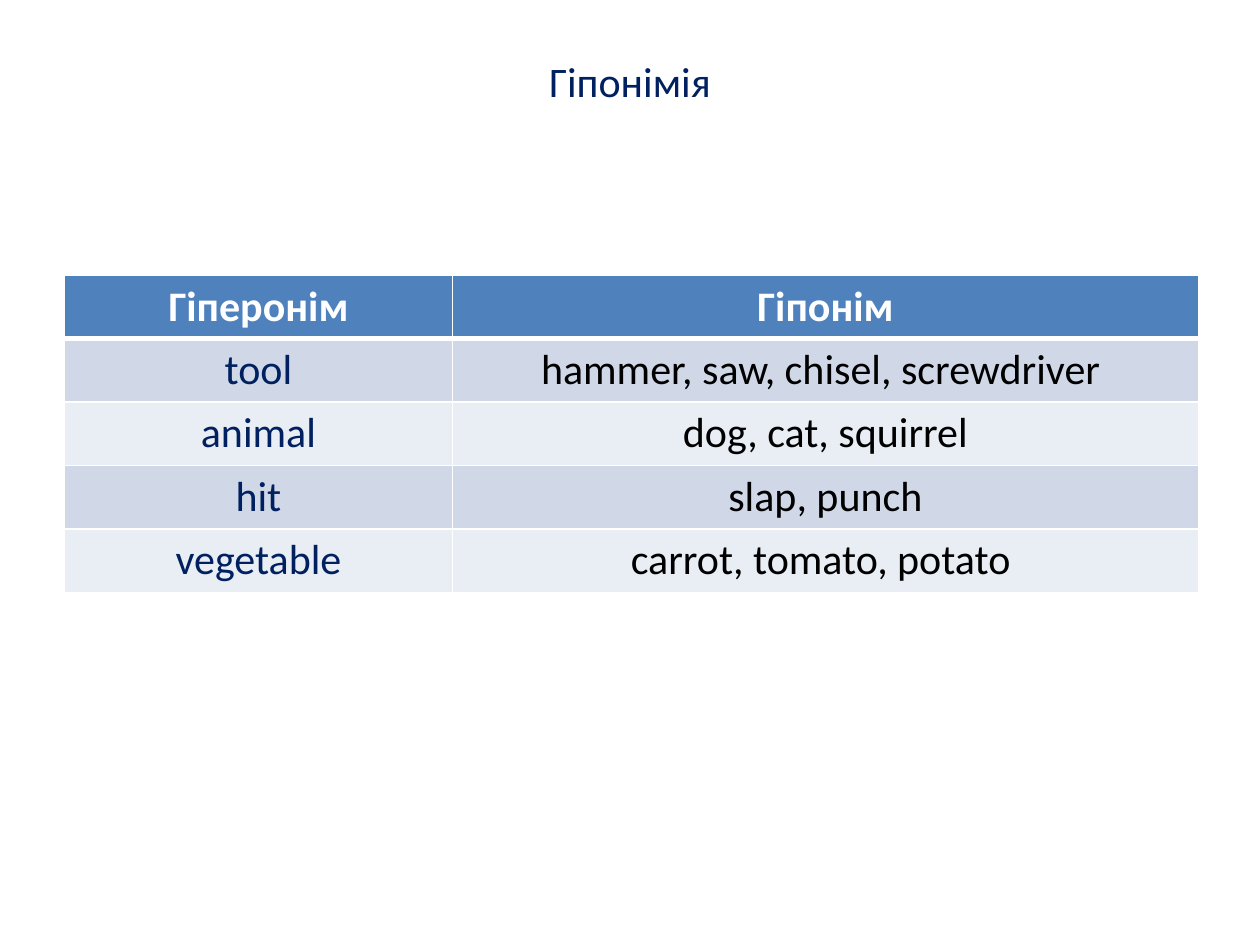
from lxml import etree
from pptx import Presentation
from pptx import util as u
from pptx.dml.color import RGBColor
from pptx.enum import text
from pptx.oxml import ns

TITLE = "Гіпонімія"
ROWS = [
    ("Гіперонім", "Гіпонім"),
    ("tool", "hammer, saw, chisel, screwdriver "),
    ("animal", "dog, cat, squirrel"),
    ("hit", "slap, punch"),
    ("vegetable", "carrot, tomato, potato "),
]
COLUMN_WIDTHS = (7.82, 15.04)
ROW_HEIGHT = 1.28
NAVY, WHITE, BLACK = "002060", "FFFFFF", "000000"
HEADER_FILL, BAND_FILLS = "4F81BD", ("D0D8E8", "E9EDF4")


def color(value):
    return RGBColor.from_string(value)


def write(text_frame, content, font_color, bold=False):
    text_frame.text = content
    paragraph = text_frame.paragraphs[0]
    paragraph.alignment = text.PP_ALIGN.CENTER
    font = paragraph.runs[0].font
    font.name, font.size, font.bold = "Calibri", u.Pt(24), bold
    font.color.rgb = color(font_color)


def add_borders(cell, bottom, top):
    """Draw white cell borders; bottom and top are widths in points."""
    properties = cell._tc.get_or_add_tcPr()
    for side, width in (("L", 1), ("R", 1), ("T", top), ("B", bottom)):
        line = etree.SubElement(properties, ns.qn(f"a:ln{side}"), w=str(u.Pt(width)))
        fill = etree.SubElement(line, ns.qn("a:solidFill"))
        etree.SubElement(fill, ns.qn("a:srgbClr"), val=WHITE)


def add_title(slide):
    box = slide.shapes.add_textbox(u.Cm(1.27), u.Cm(0.76), u.Cm(22.86), u.Cm(1.75))
    box.text_frame.word_wrap = True
    box.text_frame.vertical_anchor = text.MSO_ANCHOR.MIDDLE
    write(box.text_frame, TITLE, NAVY)


def add_word_table(slide):
    table = slide.shapes.add_table(
        len(ROWS), len(COLUMN_WIDTHS), u.Cm(1.3), u.Cm(5.54),
        u.Cm(sum(COLUMN_WIDTHS)), u.Cm(ROW_HEIGHT * len(ROWS))).table
    for column, width in zip(table.columns, COLUMN_WIDTHS):
        column.width = u.Cm(width)
    for i, words in enumerate(ROWS):
        header = i == 0
        table.rows[i].height = u.Cm(ROW_HEIGHT)
        for j, word in enumerate(words):
            cell = table.cell(i, j)
            font_color = WHITE if header else (NAVY, BLACK)[j]
            write(cell.text_frame, word, font_color, bold=header)
            add_borders(cell, bottom=3 if header else 1, top=3 if i == 1 else 1)
            cell.fill.solid()
            cell.fill.fore_color.rgb = color(HEADER_FILL if header else BAND_FILLS[(i - 1) % 2])


def main():
    presentation = Presentation()
    presentation.slide_width, presentation.slide_height = u.Cm(25.4), u.Cm(19.05)
    slide = presentation.slides.add_slide(presentation.slide_layouts[6])
    add_title(slide)
    add_word_table(slide)
    presentation.save("out.pptx")


if __name__ == "__main__":
    main()
